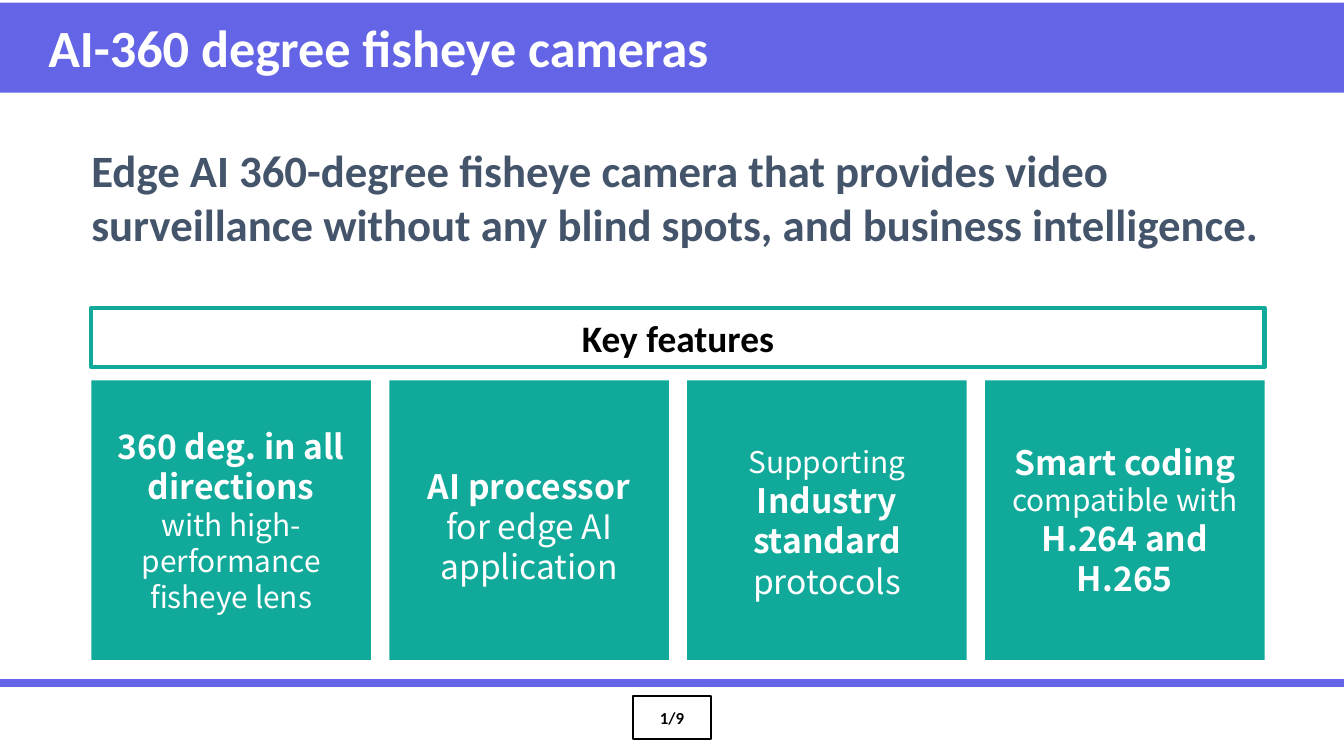
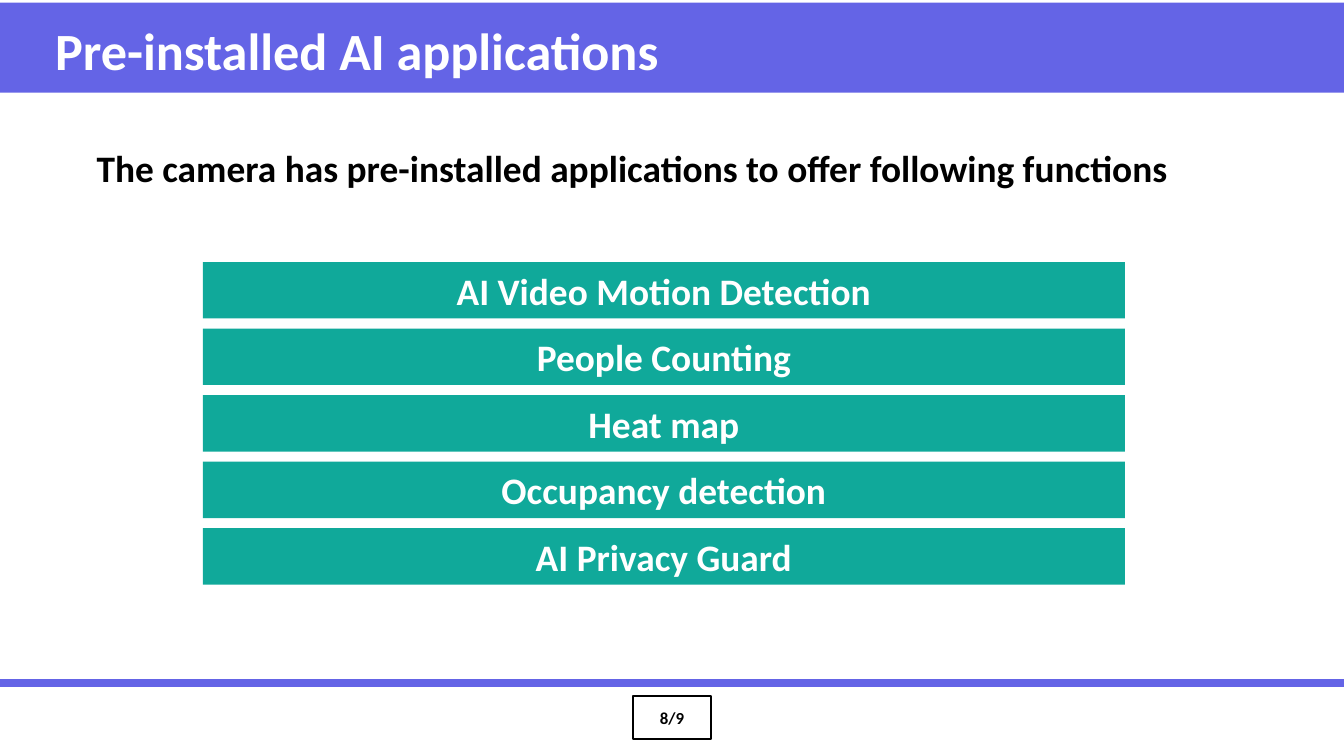
from lxml import etree
from pptx import Presentation
from pptx.dml.color import RGBColor
from pptx.enum import shapes, text
from pptx.oxml import ns
from pptx.util import Inches, Pt

VIOLET = RGBColor(0x64, 0x64, 0xE6)
TEAL = RGBColor(0x10, 0xA9, 0x9A)
SLATE = RGBColor(0x44, 0x54, 0x6A)
WHITE = RGBColor(0xFF, 0xFF, 0xFF)
BLACK = RGBColor(0x00, 0x00, 0x00)

LATIN = "Calibri"
CARD_FONT = "Noto Sans CJK JP"
PAGE_COUNT = 9
TITLE_ONLY = 5

# Shared grid of the key features
LEFT, CONTENT_WIDTH = 0.68, 8.73
CARD_TOP, CARD_SIZE = 2.83, 2.08

# Each card: paragraphs of (text, size, bold) runs; None is a line break
FEATURES = [
    [[("360 deg. in all directions", 18, True), None,
      ("with high-performance fisheye lens", 16, False)]],
    [[("AI processor", 18, True)],
     [("for edge AI application", 18, False)]],
    [[("Supporting", 16, False), (" Industry standard ", 18, True),
      ("protocols", 18, False)]],
    [[("Smart coding ", 18, True), ("compatible with ", 16, False),
      ("H.264 and H.265", 18, True)]],
]
APPLICATIONS = [
    "AI Video Motion Detection",
    "People Counting",
    "Heat map",
    "Occupancy detection",
    "AI Privacy Guard",
]


def add_run(paragraph, words, size, color, bold=True, font=LATIN):
    run = paragraph.add_run()
    run.text = words
    run.font.name = font
    run.font.size = Pt(size)
    run.font.bold = bold
    run.font.color.rgb = color


def set_margins(frame, horizontal, vertical):
    frame.margin_left = frame.margin_right = Inches(horizontal)
    frame.margin_top = frame.margin_bottom = Inches(vertical)


def add_box(slide, left, top, width, height, fill=None, line=None, line_width=1):
    box = slide.shapes.add_shape(
        shapes.MSO_SHAPE.RECTANGLE,
        Inches(left), Inches(top), Inches(width), Inches(height))
    box.shadow.inherit = False
    if fill is None:
        box.fill.background()
    else:
        box.fill.solid()
        box.fill.fore_color.rgb = fill
    if line is None:
        box.line.fill.background()
    else:
        box.line.color.rgb = line
        box.line.width = Pt(line_width)
    box.text_frame.word_wrap = True
    box.text_frame.vertical_anchor = text.MSO_ANCHOR.MIDDLE
    return box


def add_label(box, words, size, color):
    paragraph = box.text_frame.paragraphs[0]
    paragraph.alignment = text.PP_ALIGN.CENTER
    add_run(paragraph, words, size, color)


def add_statement(slide, words, left, top, width, height, size, color):
    statement = slide.shapes.add_textbox(
        Inches(left), Inches(top), Inches(width), Inches(height))
    frame = statement.text_frame
    frame.word_wrap = True
    add_run(frame.paragraphs[0], words, size, color)
    return statement


def add_card(slide, left, paragraphs):
    card = add_box(slide, left, CARD_TOP, CARD_SIZE, CARD_SIZE, fill=TEAL)
    frame = card.text_frame
    for index, pieces in enumerate(paragraphs):
        paragraph = frame.add_paragraph() if index else frame.paragraphs[0]
        paragraph.alignment = text.PP_ALIGN.CENTER
        for piece in pieces:
            if piece is None:
                paragraph.add_line_break()
            else:
                words, size, bold = piece
                add_run(paragraph, words, size, WHITE, bold, CARD_FONT)
    return card


def add_base_slide(deck, title_words, title_left, title_top, page):
    slide = deck.slides.add_slide(deck.slide_layouts[TITLE_ONLY])

    # Header band, with the title placed over it
    add_box(slide, 0, 0.02, 10, 0.67, fill=VIOLET)
    title = slide.shapes.title
    slide.shapes._spTree.append(title._element)
    title.left, title.top = Inches(title_left), Inches(title_top)
    title.width, title.height = Inches(10 - title_left), Inches(0.58)
    frame = title.text_frame
    frame.auto_size = text.MSO_AUTO_SIZE.NONE
    frame.vertical_anchor = text.MSO_ANCHOR.MIDDLE
    frame.paragraphs[0].alignment = text.PP_ALIGN.LEFT
    add_run(frame.paragraphs[0], title_words, 28, WHITE)

    # Footer rule and page number
    rule = slide.shapes.add_connector(
        shapes.MSO_CONNECTOR.STRAIGHT,
        Inches(0), Inches(5.08), Inches(10), Inches(5.08))
    rule.line.color.rgb = VIOLET
    rule.line.width = Pt(4.5)
    etree.SubElement(rule._element.spPr, ns.qn("a:effectLst"))
    page_box = add_box(slide, 4.71, 5.18, 0.58, 0.32, line=BLACK)
    set_margins(page_box.text_frame, 0.03, 0.03)
    add_label(page_box, f"{page}/{PAGE_COUNT}", 9, BLACK)
    return slide


def build_overview(deck):
    slide = add_base_slide(deck, "AI-360 degree fisheye cameras", 0.26, 0.06, 1)
    summary = add_statement(
        slide,
        "Edge AI 360-degree fisheye camera that provides video surveillance "
        "without any blind spots, and business intelligence.",
        LEFT, 1.02, 8.8, 0.89, 24, SLATE)
    set_margins(summary.text_frame, 0, 0.04)

    heading = add_box(slide, LEFT, 2.29, CONTENT_WIDTH, 0.44, WHITE, TEAL, 2.25)
    add_label(heading, "Key features", 20, BLACK)

    pitch = (CONTENT_WIDTH - CARD_SIZE) / (len(FEATURES) - 1)
    cards = [add_card(slide, LEFT + index * pitch, feature)
             for index, feature in enumerate(FEATURES)]
    cards[1].text_frame.paragraphs[0].line_spacing = Pt(28)


def build_applications(deck):
    slide = add_base_slide(deck, "Pre-installed AI applications", 0.31, 0.08, 8)
    add_statement(
        slide,
        "The camera has pre-installed applications to offer following functions",
        0.62, 1.03, 8.25, 0.44, 20, BLACK)

    first_top, last_top = 1.95, 3.93
    pitch = (last_top - first_top) / (len(APPLICATIONS) - 1)
    for index, application in enumerate(APPLICATIONS):
        bar = add_box(slide, 1.51, first_top + index * pitch, 6.86, 0.42, fill=TEAL)
        set_margins(bar.text_frame, 0.04, 0.04)
        add_label(bar, application, 20, WHITE)


def main():
    deck = Presentation()
    deck.slide_width = Inches(10)
    deck.slide_height = deck.slide_width * 9 // 16
    build_overview(deck)
    build_applications(deck)
    deck.save("out.pptx")


if __name__ == "__main__":
    main()
